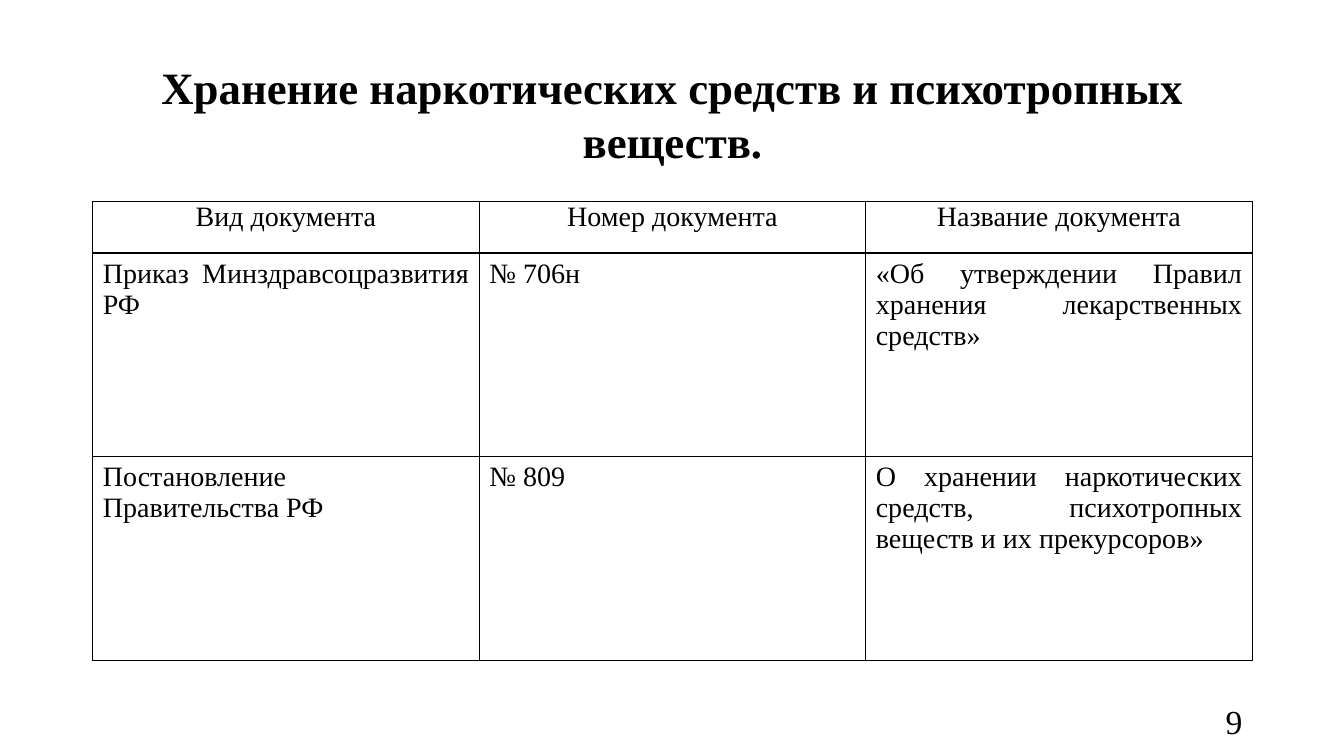
from pptx import Presentation
from pptx.dml.color import RGBColor
from pptx.enum import text as t
from pptx.oxml import parse_xml
from pptx.oxml.ns import nsdecls
from pptx.util import Inches, Pt

INK, PAPER = "000000", "FFFFFF"
ALIGN = t.PP_ALIGN


def color(code):
    return RGBColor.from_string(code)


def write(frame, words, size, align, bold=False):
    frame.word_wrap = True
    para = frame.paragraphs[0]
    para.alignment = align
    run = para.add_run()
    run.text = words
    style = {"name": "Times New Roman", "size": Pt(size), "bold": bold}
    for key, value in style.items():
        setattr(run.font, key, value)
    run.font.color.rgb = color(INK)


deck = Presentation()
deck.slide_width, deck.slide_height = Inches(13.33), Inches(7.5)
slide = deck.slides.add_slide(deck.slide_layouts[5])

# Title
title = slide.shapes.title
place = {"left": 0.92, "top": 0.4, "width": 11.5, "height": 1.45}
for key, value in place.items():
    setattr(title, key, Inches(value))
frame = title.text_frame
frame.auto_size = t.MSO_AUTO_SIZE.NONE
frame.vertical_anchor = t.MSO_ANCHOR.MIDDLE
write(frame, "Хранение наркотических средств и психотропных веществ.",
      32, ALIGN.CENTER, True)

# Table of documents
rows = [
    ["Вид документа", "Номер документа", "Название документа"],
    ["Приказ Минздравсоцразвития РФ ", "№ 706н",
     "«Об утверждении Правил хранения лекарственных средств»"],
    ["Постановление Правительства РФ ", "№ 809",
     "О хранении наркотических средств, психотропных веществ и их прекурсоров»"],
]
grid = slide.shapes.add_table(
    3, 3, Inches(0.92), Inches(2), Inches(11.5), Inches(4.54)).table
for row, high in zip(grid.rows, [0.51, 2.02, 2.02]):
    row.height = Inches(high)

for r, row in enumerate(rows):
    for c, words in enumerate(row):
        cell = grid.cell(r, c)
        head = r == 0
        if head:
            cell.margin_left = cell.margin_right = Inches(0.07)
            cell.margin_top = cell.margin_bottom = 0
        write(cell.text_frame, words, 20,
              ALIGN.CENTER if head else ALIGN.JUSTIFY)
        # Borders come before the fill in the cell properties
        props = cell._tc.get_or_add_tcPr()
        for side in ["lnL", "lnR", "lnT", "lnB"]:
            props.append(parse_xml(
                f'<a:{side} {nsdecls("a")} w="{Pt(1)}"><a:solidFill>'
                f'<a:srgbClr val="{INK}"/></a:solidFill></a:{side}>'))
        cell.fill.solid()
        cell.fill.fore_color.rgb = color(PAPER)

# Slide number
box = slide.shapes.add_textbox(
    Inches(9.42), Inches(6.95), Inches(3), Inches(0.4))
box.text_frame.vertical_anchor = t.MSO_ANCHOR.MIDDLE
write(box.text_frame, "9", 24, ALIGN.RIGHT)

deck.save("out.pptx")
